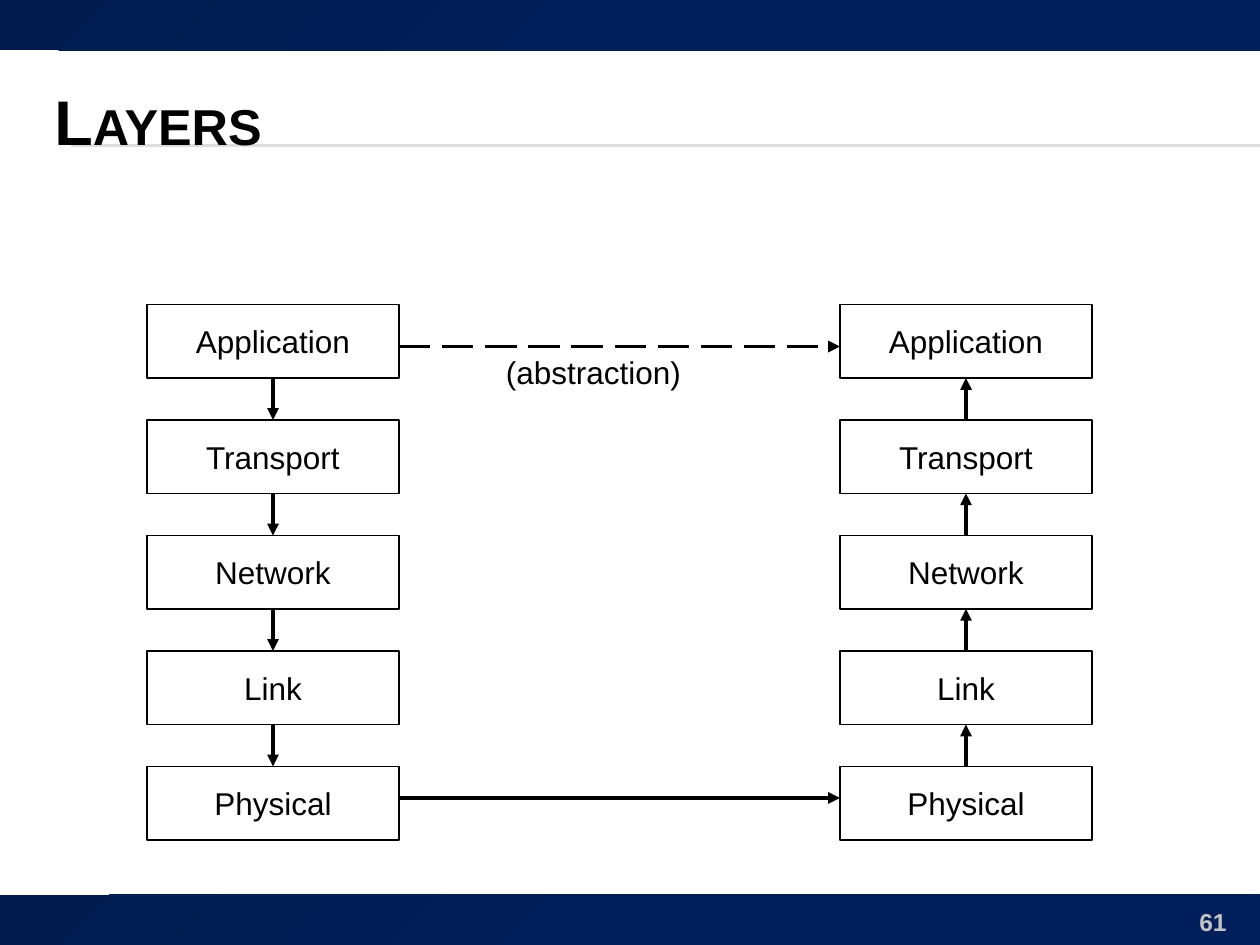
import copy
import dataclasses
import typing

import pptx
import pptx.dml.color
import pptx.enum.dml
import pptx.enum.shapes
import pptx.enum.text
import pptx.oxml.ns
import pptx.util
from lxml import etree

Align = pptx.enum.text.PP_ALIGN
Anchor = pptx.enum.text.MSO_ANCHOR
Dash = pptx.enum.dml.MSO_LINE
Rectangle = pptx.enum.shapes.MSO_SHAPE.RECTANGLE
BOTTOM, TOP = 2, 0
LAYERS = ("Application", "Transport", "Network", "Link", "Physical")


@dataclasses.dataclass(frozen=True)
class Theme:
    font: str = "Arial"
    ink: str = "000000"
    rule: str = "DDDDDD"
    number: str = "C3C3C3"
    band_start: str = "011B4E"
    band_end: str = "011F5B"
    title_size: int = 36
    label_size: int = 18
    number_size: int = 14
    thin: float = 0.75
    thick: float = 2.25


@dataclasses.dataclass(frozen=True)
class Grid:
    columns: int = 120
    rows: int = 90
    width: int = pptx.util.Inches(10)
    height: int = pptx.util.Inches(7.5)

    def x(self, column: float) -> int:
        return round(self.width * column / self.columns)

    def y(self, row: float) -> int:
        return round(self.height * row / self.rows)


@dataclasses.dataclass(frozen=True)
class Area:
    column: float
    row: float
    columns: float
    rows: float

    def place(self) -> tuple:
        return (GRID.x(self.column), GRID.y(self.row),
                GRID.x(self.columns), GRID.y(self.rows))


@dataclasses.dataclass(frozen=True)
class Stack:
    column: float
    arrow_end: str


THEME = Theme()
GRID = Grid()
BOX_COLUMNS, BOX_ROWS, FIRST_ROW, ROW_STEP = 24, 7, 29, 11
SENDER = Stack(14, "tailEnd")
RECEIVER = Stack(80, "headEnd")


def rgb(value: str) -> pptx.dml.color.RGBColor:
    return pptx.dml.color.RGBColor.from_string(value)


def apply(target: typing.Any, values: dict) -> None:
    for name, value in values.items():
        setattr(target, name, value)


def write(box, text: str, size: int, color: str, frame: dict,
          align=Align.LEFT, bold: bool = False):
    apply(box.text_frame, frame)
    para = box.text_frame.paragraphs[0]
    para.alignment = align
    span = para.add_run()
    span.text = text
    apply(span.font, {"name": THEME.font, "size": pptx.util.Pt(size), "bold": bold})
    span.font.color.rgb = rgb(color)
    return span


def add_text(page, area: Area, text: str, size: int, color: str,
             anchor=Anchor.TOP, **style):
    box = page.shapes.add_textbox(*area.place())
    frame = {"word_wrap": True, "vertical_anchor": anchor}
    return write(box, text, size, color, frame, **style)


def add_band(page, row: float, rows: float) -> None:
    area = Area(0, row, GRID.columns, rows)
    band = page.shapes.add_shape(Rectangle, *area.place())
    band.shadow.inherit = False
    band.line.fill.background()
    band.fill.gradient()
    band.fill.gradient_angle = 315
    colors = (THEME.band_start, THEME.band_end)
    for stop, color, position in zip(band.fill.gradient_stops, colors, (0, 0.5)):
        stop.color.rgb = rgb(color)
        stop.position = position
    middle = band._element.xpath(".//a:gs")[-1]
    last = copy.deepcopy(middle)
    last.set("pos", "100000")
    middle.addnext(last)


def add_line(page, start: tuple, end: tuple, color: str, width: float,
             arrow_end: str = "", dash=None):
    line = page.shapes.add_connector(
        pptx.enum.shapes.MSO_CONNECTOR.STRAIGHT,
        GRID.x(start[0]), GRID.y(start[1]), GRID.x(end[0]), GRID.y(end[1]))
    apply(line.line, {"width": pptx.util.Pt(width), "dash_style": dash})
    line.line.color.rgb = rgb(color)
    if arrow_end:
        tip = etree.SubElement(line.line._get_or_add_ln(),
                               pptx.oxml.ns.qn(f"a:{arrow_end}"))
        tip.set("type", "triangle")
    etree.SubElement(line._element.spPr, pptx.oxml.ns.qn("a:effectLst"))
    return line


def add_layer(page, stack: Stack, index: int, label: str):
    area = Area(stack.column, FIRST_ROW + index * ROW_STEP, BOX_COLUMNS, BOX_ROWS)
    box = page.shapes.add_shape(Rectangle, *area.place())
    box.shadow.inherit = False
    box.fill.background()
    box.line.color.rgb = rgb(THEME.ink)
    box.line.width = pptx.util.Pt(THEME.thin)
    frame = {"word_wrap": False, "vertical_anchor": Anchor.MIDDLE}
    write(box, label, THEME.label_size, THEME.ink, frame, Align.CENTER)
    return box


def add_stack(page, stack: Stack) -> None:
    boxes = [add_layer(page, stack, index, label)
             for index, label in enumerate(LAYERS)]
    center = stack.column + BOX_COLUMNS / 2
    for index, (upper, lower) in enumerate(zip(boxes, boxes[1:])):
        gap_end = FIRST_ROW + (index + 1) * ROW_STEP
        gap_start = gap_end - ROW_STEP + BOX_ROWS
        arrow = add_line(page, (center, gap_start), (center, gap_end),
                         THEME.ink, THEME.thick, stack.arrow_end)
        arrow.begin_connect(upper, BOTTOM)
        arrow.end_connect(lower, TOP)


def main() -> None:
    deck = pptx.Presentation()
    apply(deck, {"slide_width": GRID.width, "slide_height": GRID.height})
    page = deck.slides.add_slide(deck.slide_layouts[6])

    for row in (13.8, 13.92):
        add_line(page, (6.72, row), (GRID.columns, row), THEME.rule, THEME.thin)
    band_rows = 4.8
    for row in (0, GRID.rows - band_rows):
        add_band(page, row, band_rows)

    add_text(page, Area(108, 85.8, 10, 3.24), "61", THEME.number_size,
             THEME.number, align=Align.RIGHT, bold=True)
    title = add_text(page, Area(4, 6, 114, 11), "Layers", THEME.title_size,
                     THEME.ink, anchor=Anchor.MIDDLE, bold=True)
    title._r.get_or_add_rPr().set("cap", "small")

    for stack in (RECEIVER, SENDER):
        add_stack(page, stack)
    for row, dash in ((76, None), (33, Dash.LONG_DASH)):
        add_line(page, (SENDER.column + BOX_COLUMNS, row), (RECEIVER.column, row),
                 THEME.ink, THEME.thick, "tailEnd", dash)
    add_text(page, Area(47, 33, 22.5, 6), "(abstraction)",
             THEME.label_size, THEME.ink)

    deck.save("out.pptx")


if __name__ == "__main__":
    main()
